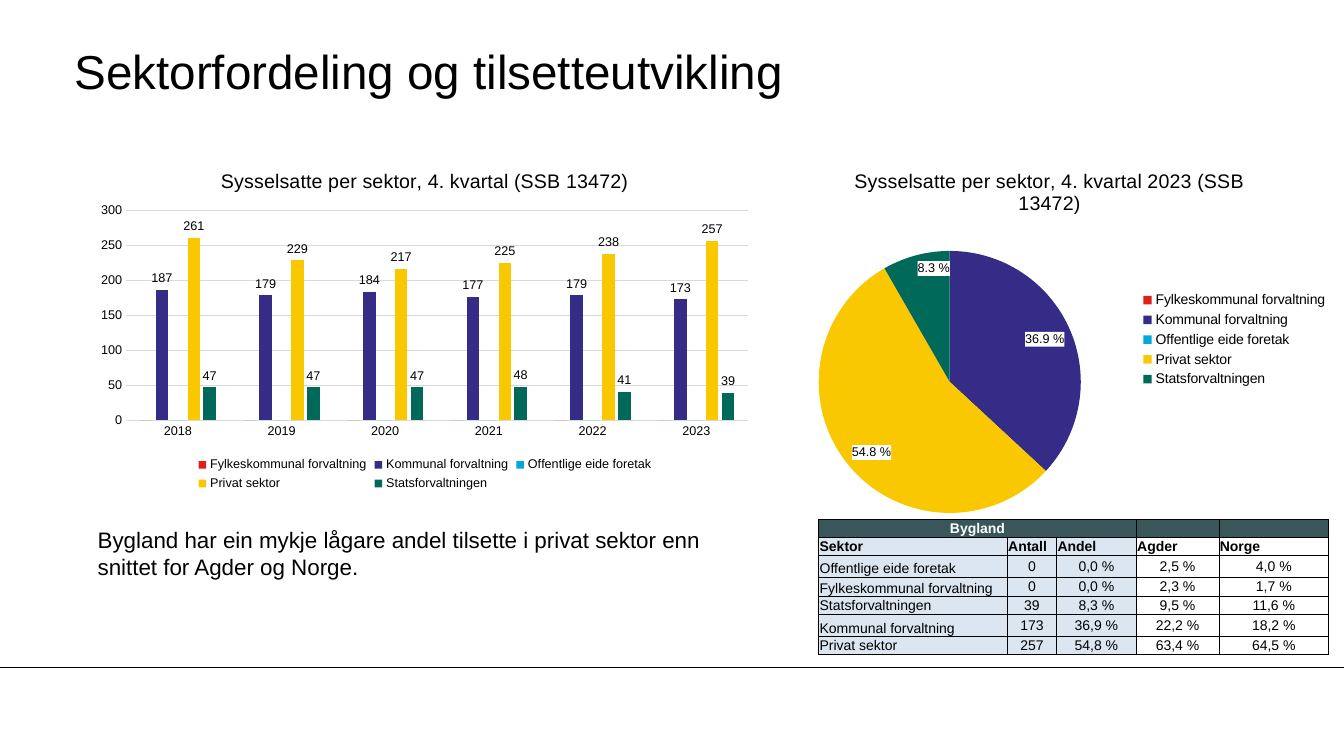
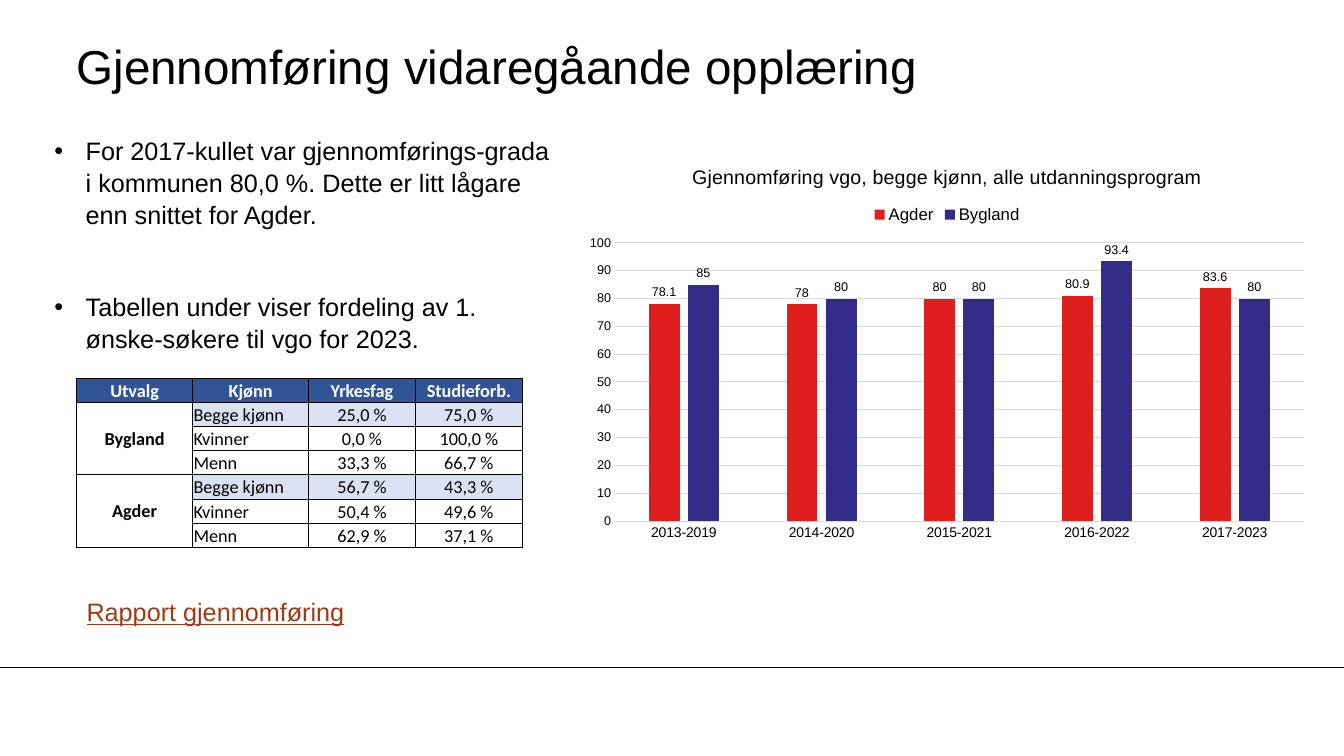
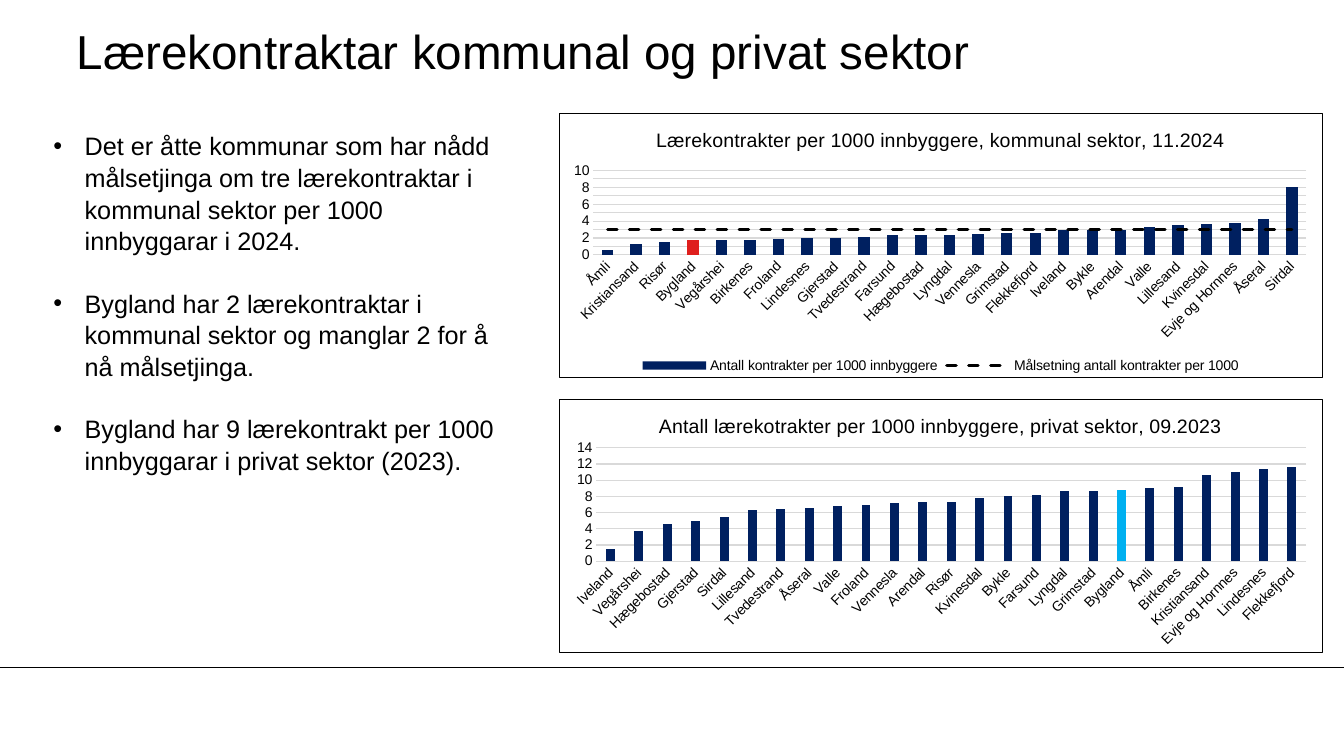
from dataclasses import dataclass, field
from typing import Callable, NamedTuple, Optional

from pptx import Presentation
from pptx import util as u
from pptx.chart import data as chart_data
from pptx.dml.color import RGBColor
from pptx.enum import chart as ec
from pptx.enum import dml, shapes, text
from pptx.oxml import parse_xml
from pptx.oxml.ns import nsdecls, qn
from pptx.oxml.xmlchemy import OxmlElement

BLACK = RGBColor(0x00, 0x00, 0x00)
WHITE = RGBColor(0xFF, 0xFF, 0xFF)
GRID_GREY = RGBColor(0xD9, 0xD9, 0xD9)
RED = RGBColor(0xDF, 0x1F, 0x1D)
INDIGO = RGBColor(0x34, 0x2C, 0x86)
CYAN = RGBColor(0x00, 0xA9, 0xDA)
YELLOW = RGBColor(0xFA, 0xC8, 0x00)
GREEN = RGBColor(0x00, 0x69, 0x5A)
NAVY = RGBColor(0x00, 0x20, 0x60)
SKY = RGBColor(0x00, 0xB0, 0xF0)
LINK_BROWN = RGBColor(0x9F, 0x3A, 0x14)
SLATE = RGBColor(0x39, 0x57, 0x5B)
PALE_BLUE = RGBColor(0xDC, 0xE6, 0xF1)
TABLE_BLUE = RGBColor(0x30, 0x54, 0x96)
TABLE_PALE = RGBColor(0xD9, 0xE1, 0xF2)
FONT = "Arial"
LEFT, CENTER = text.PP_ALIGN.LEFT, text.PP_ALIGN.CENTER
MIDDLE, BOTTOM = text.MSO_ANCHOR.MIDDLE, text.MSO_ANCHOR.BOTTOM


class Box(NamedTuple):
    """A rectangle on the slide, in inches."""
    left: float
    top: float
    width: float
    height: float

    def emu(self) -> list:
        return [u.Inches(length) for length in self]


@dataclass
class Series:
    name: str
    values: list
    color: RGBColor
    label_format: Optional[str] = None
    highlights: dict = field(default_factory=dict)


@dataclass
class ChartSpec:
    box: Box
    plot: Box
    title: str
    categories: list
    series: list
    legend: Optional[ec.XL_LEGEND_POSITION] = None
    legend_size: float = 10
    legend_box: Optional[Box] = None
    border: bool = False


@dataclass
class ColumnSpec(ChartSpec):
    maximum: float = 100
    major_unit: float = 10
    category_size: float = 10
    value_size: float = 9
    gap: int = 219
    overlap: int = -27
    slanted: bool = False


class CellStyle(NamedTuple):
    fill: Optional[RGBColor]
    color: RGBColor = BLACK
    bold: bool = False
    align: text.PP_ALIGN = CENTER
    anchor: text.MSO_ANCHOR = BOTTOM


@dataclass
class TableSpec:
    box: Box
    columns: list
    row_heights: list
    rows: list
    merges: list
    font: str
    size: float
    style: Callable[[int, int], CellStyle]


def style_font(font, size: float, color: RGBColor = BLACK, name: str = FONT, bold: bool = False) -> None:
    font.size, font.name, font.bold = u.Pt(size), name, bold
    font.color.rgb = color


def move(shape, box: Box) -> None:
    shape.left, shape.top, shape.width, shape.height = box.emu()


def add_slide(presentation, layout: int, title: str, left: float, top: float):
    slide = presentation.slides.add_slide(presentation.slide_layouts[layout])
    move(slide.shapes.title, Box(left, top, 11.1, 0.75))
    frame = slide.shapes.title.text_frame
    frame.text = title
    frame.vertical_anchor, frame.auto_size = MIDDLE, text.MSO_AUTO_SIZE.NONE
    frame.margin_left = frame.margin_right = frame.margin_top = frame.margin_bottom = 0
    frame.paragraphs[0].alignment = LEFT
    style_font(frame.paragraphs[0].runs[0].font, 34)
    return slide


def add_master_rule(presentation, slide) -> None:
    """Draw the footer rule and hand it to the master, so every slide shows it."""
    y = u.Inches(6.62)
    rule = slide.shapes.add_connector(shapes.MSO_CONNECTOR.STRAIGHT, 0, y, presentation.slide_width, y)
    rule.line.color.rgb, rule.line.width = BLACK, u.Pt(0.75)
    rule.element.spPr.append(OxmlElement("a:effectLst"))
    presentation.slide_master.shapes.element.append(rule.element)


def add_text(slide, box: Box, content: str, size: float, color: RGBColor = BLACK, underline: bool = False) -> None:
    frame = slide.shapes.add_textbox(*box.emu()).text_frame
    frame.word_wrap = True
    frame.text = content
    font = frame.paragraphs[0].runs[0].font
    style_font(font, size, color)
    font.underline = underline


def fill_list(slide, box: Box, items: list, gap: float) -> None:
    body = slide.placeholders[1]
    move(body, box)
    frame = body.text_frame
    frame.text = "\n".join(items)
    frame.auto_size = text.MSO_AUTO_SIZE.NONE
    for index, paragraph in enumerate(frame.paragraphs):
        paragraph.line_spacing = 1.05
        paragraph.space_before = u.Pt(gap if index else 0)
        style_font(paragraph.runs[0].font, 18)
    for properties in body.element.iter(qn("a:pPr")):
        properties.set("marL", str(u.Inches(0.31)))
        properties.set("indent", str(-u.Inches(0.31)))


def add_table(slide, spec: TableSpec) -> None:
    frame = slide.shapes.add_table(len(spec.rows), len(spec.columns), *spec.box.emu())
    table = frame.table
    table.first_row = table.horz_banding = False
    for column, width in zip(table.columns, spec.columns):
        column.width = u.Inches(width)
    for r, (row, height) in enumerate(zip(spec.rows, spec.row_heights)):
        table.rows[r].height = u.Inches(height)
        for c, content in enumerate(row):
            cell, style = table.cell(r, c), spec.style(r, c)
            cell.margin_left = cell.margin_right = cell.margin_top = u.Inches(0.01)
            cell.margin_bottom = 0
            cell.vertical_anchor = style.anchor
            cell.text = content
            paragraph = cell.text_frame.paragraphs[0]
            paragraph.alignment = style.align
            for run in paragraph.runs:
                style_font(run.font, spec.size, style.color, spec.font, style.bold)
            if style.fill is None:
                cell.fill.background()
            else:
                cell.fill.solid()
                cell.fill.fore_color.rgb = style.fill
    for r, c, last_r, last_c in spec.merges:
        table.cell(r, c).merge(table.cell(last_r, last_c))
    for paragraph in frame.element.iter(qn("a:p")):
        if paragraph.find(qn("a:r")) is None:
            end = OxmlElement("a:endParaRPr")
            end.set("sz", str(int(spec.size * 100)))
            paragraph.append(end)
    for properties in frame.element.iter(qn("a:tcPr")):
        for index, side in enumerate(("lnL", "lnR", "lnT", "lnB")):
            properties.insert(index, parse_xml(
                f'<a:{side} {nsdecls("a")} w="6350"><a:solidFill><a:srgbClr val="{BLACK}"/></a:solidFill></a:{side}>'))


def place(element, box: Box, chart_box: Box, target: str = "") -> None:
    """Fix a chart part at a box on the slide."""
    inner = f'<c:layoutTarget val="{target}"/>' if target else ""
    modes = "".join(f'<c:{axis}Mode val="edge"/>' for axis in "xy")
    fractions = {
        "x": (box.left - chart_box.left) / chart_box.width,
        "y": (box.top - chart_box.top) / chart_box.height,
        "w": box.width / chart_box.width,
        "h": box.height / chart_box.height,
    }
    values = "".join(f'<c:{key} val="{value:.4f}"/>' for key, value in fractions.items())
    layout = parse_xml(f'<c:layout {nsdecls("c")}><c:manualLayout>{inner}{modes}{values}</c:manualLayout></c:layout>')
    for old in element.findall(qn("c:layout")):
        element.remove(old)
    overlay = element.find(qn("c:overlay"))
    if overlay is None:
        element.insert(0, layout)
    else:
        overlay.addprevious(layout)


def add_chart(slide, kind: ec.XL_CHART_TYPE, spec: ChartSpec):
    """Add a chart with the title, legend, frame and plot position that all charts share."""
    data = chart_data.CategoryChartData()
    data.categories = spec.categories
    for series in spec.series:
        data.add_series(series.name, series.values)
    chart = slide.shapes.add_chart(kind, *spec.box.emu(), data).chart
    style_font(chart.font, 10)
    chart.has_title = True
    chart.chart_title.text_frame.text = spec.title
    style_font(chart.chart_title.text_frame.paragraphs[0].runs[0].font, 14)
    chart.has_legend = spec.legend is not None
    if chart.has_legend:
        chart.legend.position, chart.legend.include_in_layout = spec.legend, False
        style_font(chart.legend.font, spec.legend_size)
    if spec.legend_box:
        place(chart.element.xpath("c:chart/c:legend")[0], spec.legend_box, spec.box)
    place(chart.element.xpath("c:chart/c:plotArea")[0], spec.plot, spec.box, "inner")
    outline = f'<a:solidFill><a:srgbClr val="{BLACK}"/></a:solidFill>' if spec.border else "<a:noFill/>"
    chart.element.find(qn("c:chart")).addnext(parse_xml(
        f'<c:spPr {nsdecls("c", "a")}><a:noFill/><a:ln w="9525">{outline}</a:ln></c:spPr>'))
    return chart


def add_labels(series, number_format: str, position: ec.XL_LABEL_POSITION):
    labels = series.data_labels
    labels.number_format, labels.number_format_is_linked = number_format, False
    labels.show_value, labels.position = True, position
    style_font(labels.font, 9)
    return labels


def paint(target, color: RGBColor) -> None:
    target.format.fill.solid()
    target.format.fill.fore_color.rgb = color


def add_column_chart(slide, spec: ColumnSpec):
    chart = add_chart(slide, ec.XL_CHART_TYPE.COLUMN_CLUSTERED, spec)
    plot = chart.plots[0]
    plot.gap_width, plot.overlap, plot.vary_by_categories = spec.gap, spec.overlap, False
    for series, wanted in zip(plot.series, spec.series):
        paint(series, wanted.color)
        for index, color in wanted.highlights.items():
            paint(series.points[index], color)
        if wanted.label_format:
            add_labels(series, wanted.label_format, ec.XL_LABEL_POSITION.OUTSIDE_END)
    categories, values = chart.category_axis, chart.value_axis
    for axis, size in ((categories, spec.category_size), (values, spec.value_size)):
        axis.major_tick_mark = axis.minor_tick_mark = ec.XL_TICK_MARK.NONE
        style_font(axis.tick_labels.font, size)
    values.minimum_scale, values.maximum_scale, values.major_unit = 0, spec.maximum, spec.major_unit
    values.tick_labels.number_format, values.tick_labels.number_format_is_linked = "#,##0", False
    values.format.line.fill.background()
    for line in (categories.format.line, values.major_gridlines.format.line):
        line.color.rgb, line.width = GRID_GREY, u.Pt(0.75)
    if spec.slanted:
        chart.element.xpath(".//c:catAx/c:txPr/a:bodyPr")[0].set("rot", "-2700000")
    return chart


def last_series_to_dashed_line(chart) -> None:
    series = chart.plots[0].series[-1]
    series.format.fill.background()
    line = series.format.line
    line.color.rgb, line.width, line.dash_style = BLACK, u.Pt(2.25), dml.MSO_LINE.DASH
    bars = chart.element.xpath(".//c:barChart")[0]
    element = bars.findall(qn("c:ser"))[-1]
    element.find(".//" + qn("a:ln")).set("cap", "rnd")
    for bar_only in element.findall(qn("c:invertIfNegative")):
        element.remove(bar_only)
    element.find(qn("c:spPr")).addnext(parse_xml(
        f'<c:marker {nsdecls("c")}><c:symbol val="none"/></c:marker>'))
    element.append(parse_xml(f'<c:smooth {nsdecls("c")} val="0"/>'))
    axes = "".join(f'<c:axId val="{axis.get("val")}"/>' for axis in bars.findall(qn("c:axId")))
    lines = parse_xml(f'<c:lineChart {nsdecls("c")}><c:grouping val="standard"/><c:varyColors val="0"/>'
                      f'<c:marker val="1"/>{axes}</c:lineChart>')
    lines.insert(2, element)
    bars.addnext(lines)


def add_pie_chart(slide, spec: ChartSpec, colors: list) -> None:
    chart = add_chart(slide, ec.XL_CHART_TYPE.PIE, spec)
    series = chart.plots[0].series[0]
    for index, color in enumerate(colors):
        paint(series.points[index], color)
    labels = add_labels(series, "0.0\\ %", ec.XL_LABEL_POSITION.INSIDE_END)
    labels.show_value, labels.show_percentage = False, True
    element = chart.element.xpath(".//c:ser/c:dLbls")[0]
    element.find(qn("c:txPr")).addprevious(parse_xml(
        f'<c:spPr {nsdecls("c", "a")}><a:solidFill><a:srgbClr val="{WHITE}"/></a:solidFill></c:spPr>'))
    empty = [index for index, value in enumerate(spec.series[0].values) if not value]
    for position, index in enumerate(empty):
        element.insert(position, parse_xml(
            f'<c:dLbl {nsdecls("c")}><c:idx val="{index}"/><c:delete val="1"/></c:dLbl>'))


def sector_cell(row: int, column: int) -> CellStyle:
    if row == 0:
        return CellStyle(SLATE, WHITE, True)
    fill = PALE_BLUE if column < 3 else None
    if row == 1 or column == 0:
        return CellStyle(fill, bold=row == 1, align=LEFT)
    return CellStyle(fill, anchor=MIDDLE)


def applicant_cell(row: int, column: int) -> CellStyle:
    if row == 0:
        return CellStyle(TABLE_BLUE, WHITE, True)
    if column == 0:
        return CellStyle(WHITE, bold=True, anchor=MIDDLE)
    return CellStyle(TABLE_PALE if row % 3 == 1 else WHITE, align=LEFT if column == 1 else CENTER)


def build_sector_slide(presentation) -> None:
    slide = add_slide(presentation, 5, "Sektorfordeling og tilsetteutvikling", 0.74, 0.32)
    add_master_rule(presentation, slide)
    add_text(slide, Box(0.87, 5.17, 6.41, 0.64),
             "Bygland har ein mykje lågare andel tilsette i privat sektor enn snittet for Agder og Norge.", 16)
    add_table(slide, TableSpec(
        Box(8.12, 5.15, 5.05, 1.33), [1.87, 0.49, 0.79, 0.82, 1.09],
        [0.17, 0.17, 0.22, 0.19, 0.17, 0.22, 0.17],
        [["Bygland", "", "", "", ""],
         ["Sektor", "Antall", "Andel", "Agder", "Norge"],
         ["Offentlige eide foretak", "0", "0,0 %", "2,5 %", "4,0 %"],
         ["Fylkeskommunal forvaltning", "0", "0,0 %", "2,3 %", "1,7 %"],
         ["Statsforvaltningen", "39", "8,3 %", "9,5 %", "11,6 %"],
         ["Kommunal forvaltning", "173", "36,9 %", "22,2 %", "18,2 %"],
         ["Privat sektor", "257", "54,8 %", "63,4 %", "64,5 %"]],
        [(0, 0, 0, 2)], FONT, 10, sector_cell))
    sectors = [
        Series("Fylkeskommunal forvaltning", [0] * 6, RED),
        Series("Kommunal forvaltning", [187, 179, 184, 177, 179, 173], INDIGO, "#,##0"),
        Series("Offentlige eide foretak", [0] * 6, CYAN),
        Series("Privat sektor", [261, 229, 217, 225, 238, 257], YELLOW, "#,##0"),
        Series("Statsforvaltningen", [47, 47, 47, 48, 41, 39], GREEN, "#,##0"),
    ]
    add_column_chart(slide, ColumnSpec(
        Box(0.87, 1.51, 6.69, 3.4), Box(1.25, 2.09, 6.17, 2.08),
        "Sysselsatte per sektor, 4. kvartal (SSB 13472)", [str(year) for year in range(2018, 2024)], sectors,
        ec.XL_LEGEND_POSITION.BOTTOM, 9, maximum=300, major_unit=50, category_size=9))
    add_pie_chart(slide, ChartSpec(
        Box(7.55, 1.51, 5.72, 3.72), Box(8.12, 2.49, 2.6, 2.6),
        "Sysselsatte per sektor, 4. kvartal 2023 (SSB 13472)", [sector.name for sector in sectors],
        [Series("Series 1", [0, 36.9, 0, 54.8, 8.3], INDIGO)], ec.XL_LEGEND_POSITION.RIGHT),
        [sector.color for sector in sectors])


def build_completion_slide(presentation) -> None:
    slide = add_slide(presentation, 1, "Gjennomføring vidaregåande opplæring", 0.76, 0.27)
    fill_list(slide, Box(0.44, 1.28, 5.17, 2.22), [
        "For 2017-kullet var gjennomførings-grada i kommunen 80,0 %. Dette er litt lågare enn snittet for Agder.",
        "Tabellen under viser fordeling av 1. ønske-søkere til vgo for 2023."], 43.4)
    add_table(slide, TableSpec(
        Box(0.76, 3.75, 4.42, 1.69), [1.15, 1.15, 1.06, 1.06], [0.24] * 7,
        [["Utvalg", "Kjønn", "Yrkesfag", "Studieforb."],
         ["Bygland", "Begge kjønn", "25,0 %", "75,0 %"],
         ["", "Kvinner", "0,0 %", "100,0 %"],
         ["", "Menn", "33,3 %", "66,7 %"],
         ["Agder", "Begge kjønn", "56,7 %", "43,3 %"],
         ["", "Kvinner", "50,4 %", "49,6 %"],
         ["", "Menn", "62,9 %", "37,1 %"]],
        [(1, 0, 3, 0), (4, 0, 6, 0)], "Calibri", 13, applicant_cell))
    add_text(slide, Box(0.76, 5.87, 2.81, 0.4), "Rapport gjennomføring", 18, LINK_BROWN, True)
    add_column_chart(slide, ColumnSpec(
        Box(5.71, 1.46, 7.37, 3.98), Box(6.1, 2.41, 6.83, 2.76),
        "Gjennomføring vgo, begge kjønn, alle utdanningsprogram",
        [f"{year}-{year + 6}" for year in range(2013, 2018)],
        [Series("Agder", [78.1, 78, 80, 80.9, 83.6], RED, "General"),
         Series("Bygland", [85, 80, 80, 93.4, 80], INDIGO, "General")],
        ec.XL_LEGEND_POSITION.TOP, 12, Box(8.62, 2, 1.55, 0.26)))


def build_contract_slide(presentation) -> None:
    slide = add_slide(presentation, 1, "Lærekontraktar kommunal og privat sektor", 0.76, 0.13)
    fill_list(slide, Box(0.43, 1.23, 4.75, 3.74), [
        "Det er åtte kommunar som har nådd målsetjinga om tre lærekontraktar i kommunal sektor "
        "per 1000 innbyggarar i 2024.",
        "Bygland har 2 lærekontraktar i kommunal sektor og manglar 2 for å nå målsetjinga.",
        "Bygland har 9 lærekontrakt per 1000 innbyggarar i privat sektor (2023)."], 21.7)
    add_column_chart(slide, ColumnSpec(
        Box(5.54, 3.96, 7.58, 2.52), Box(5.91, 4.44, 7.05, 1.13),
        "Antall lærekotrakter per 1000 innbyggere, privat sektor, 09.2023",
        ["Iveland", "Vegårshei", "Hægebostad", "Gjerstad", "Sirdal", "Lillesand", "Tvedestrand", "Åseral", "Valle",
         "Froland", "Vennesla", "Arendal", "Risør", "Kvinesdal", "Bykle", "Farsund", "Lyngdal", "Grimstad",
         "Bygland", "Åmli", "Birkenes", "Kristiansand", "Evje og Hornnes", "Lindesnes", "Flekkefjord"],
        [Series("Series 1", [1.5, 3.7, 4.6, 5, 5.4, 6.3, 6.5, 6.6, 6.8, 7, 7.2, 7.3, 7.3, 7.8, 8, 8.2, 8.7, 8.7,
                             8.8, 9, 9.1, 10.6, 11, 11.4, 11.6], NAVY, highlights={18: SKY})],
        border=True, maximum=14, major_unit=2, value_size=10, slanted=True))
    municipal = add_column_chart(slide, ColumnSpec(
        Box(5.54, 1.12, 7.58, 2.63), Box(5.88, 1.69, 7.08, 0.84),
        "Lærekontrakter per 1000 innbyggere, kommunal sektor, 11.2024",
        ["Åmli", "Kristiansand", "Risør", "Bygland", "Vegårshei", "Birkenes", "Froland", "Lindesnes", "Gjerstad",
         "Tvedestrand", "Farsund", "Hægebostad", "Lyngdal", "Vennesla", "Grimstad", "Flekkefjord", "Iveland",
         "Bykle", "Arendal", "Valle", "Lillesand", "Kvinesdal", "Evje og Hornnes", "Åseral", "Sirdal"],
        [Series("Antall kontrakter per 1000 innbyggere",
                [0.6, 1.3, 1.5, 1.8, 1.8, 1.8, 1.9, 2, 2, 2.1, 2.3, 2.3, 2.3, 2.5, 2.6, 2.6, 2.9, 3, 3, 3.3, 3.6,
                 3.7, 3.8, 4.3, 8], NAVY, highlights={3: RED}),
         Series("Målsetning antall kontrakter per 1000", [3] * 25, BLACK)],
        ec.XL_LEGEND_POSITION.BOTTOM, border=True, maximum=10, major_unit=1, value_size=10,
        gap=150, overlap=0, slanted=True))
    last_series_to_dashed_line(municipal)


def main() -> None:
    presentation = Presentation()
    presentation.slide_width, presentation.slide_height = u.Inches(13.33), u.Inches(7.5)
    build_sector_slide(presentation)
    build_completion_slide(presentation)
    build_contract_slide(presentation)
    presentation.save("out.pptx")


if __name__ == "__main__":
    main()
